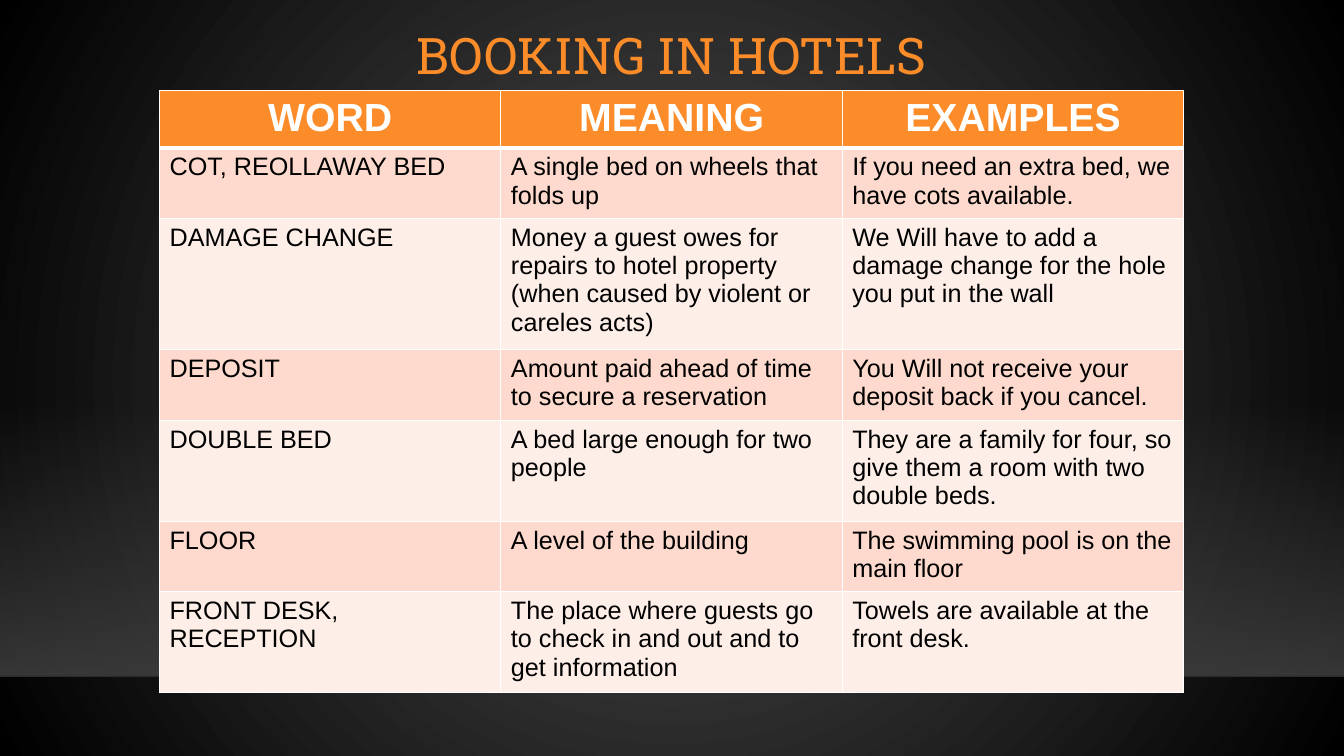
from lxml import etree
from pptx import Presentation
from pptx.dml.color import RGBColor
from pptx.enum.shapes import MSO_CONNECTOR, MSO_SHAPE
from pptx.enum.text import MSO_ANCHOR, PP_ALIGN
from pptx.oxml import parse_xml
from pptx.oxml.ns import nsdecls, qn
from pptx.util import Cm, Pt

STRAIGHT = MSO_CONNECTOR.STRAIGHT
RECTANGLE = MSO_SHAPE.RECTANGLE
MIDDLE = MSO_ANCHOR.MIDDLE
LEFT, CENTER = PP_ALIGN.LEFT, PP_ALIGN.CENTER

COLORS = {
    "orange": "FB8C29",
    "white": "FFFFFF",
    "black": "000000",
    "dark_band": "FDDACD",
    "light_band": "FEEEE8",
    "glow": "505050",
    "floor": "454545",
    "edge": "000001",
}
ROWS = [
    ("WORD", "MEANING", "EXAMPLES"),
    ("COT, REOLLAWAY BED", "A single bed on wheels that folds up",
     "If you need an extra bed, we have cots available."),
    ("DAMAGE CHANGE",
     "Money a guest owes for repairs to hotel property (when caused by violent or careles acts)",
     "We Will have to add a damage change for the hole you put in the wall"),
    ("DEPOSIT", "Amount paid ahead of time to secure a reservation",
     "You Will not receive your deposit back if you cancel."),
    ("DOUBLE BED", "A bed large enough for two people",
     "They are a family for four, so give them a room with two double beds."),
    ("FLOOR", "A level of the building", "The swimming pool is on the main floor"),
    ("FRONT DESK, RECEPTION",
     "The place where guests go to check in and out and to get information",
     "Towels are available at the front desk."),
]
WIDTH, HEIGHT = Cm(33.87), Cm(19.05)
TABLE_LEFT, TABLE_WIDTH = Cm(4.02), Cm(25.81)
ROW_HEIGHT = Cm(1.04)
FLOOR_TOP, FLOOR_BOTTOM = Cm(10.06), Cm(17.04)


def write_text(frame, text, size, color, font="Arial", bold=False, align=LEFT, spacing=None):
    paragraph = frame.paragraphs[0]
    paragraph.alignment = align
    paragraph.line_spacing = spacing
    run = paragraph.add_run()
    run.text = text
    run.font.name = font
    run.font.size = Pt(size)
    run.font.bold = bold
    run.font.color.rgb = RGBColor.from_string(COLORS[color])


def set_gradient(element, start, end, direction, opacities=(100, 100)):
    stops = "".join(
        f'<a:gs pos="{position}"><a:srgbClr val="{COLORS[color]}">'
        f'<a:alpha val="{opacity * 1000}"/></a:srgbClr></a:gs>'
        for position, color, opacity in zip((0, 100000), (start, end), opacities)
    )
    gradient = parse_xml(
        f'<a:gradFill {nsdecls("a")} rotWithShape="1"><a:gsLst>{stops}</a:gsLst>{direction}</a:gradFill>'
    )
    solid = next(element.iter(qn("a:solidFill")))
    solid.getparent().replace(solid, gradient)


presentation = Presentation()
presentation.slide_width, presentation.slide_height = WIDTH, HEIGHT
slide = presentation.slides.add_slide(presentation.slide_layouts[6])

slide.background.fill.solid()
set_gradient(
    slide.element, "glow", "black",
    '<a:path path="circle"><a:fillToRect l="50000" t="50000" r="50000" b="50000"/></a:path>',
)

floor = slide.shapes.add_shape(RECTANGLE, 0, FLOOR_TOP, WIDTH, FLOOR_BOTTOM - FLOOR_TOP)
floor.shadow.inherit = False
floor.line.fill.background()
floor.fill.solid()
set_gradient(floor.element.spPr, "floor", "floor", '<a:lin ang="5400000" scaled="0"/>', (0, 80))

edge = slide.shapes.add_connector(STRAIGHT, 0, FLOOR_BOTTOM, WIDTH, FLOOR_BOTTOM)
edge.line.width = Pt(1)
edge.line.color.rgb = RGBColor.from_string(COLORS["edge"])
edge_color = next(edge.element.spPr.iter(qn("a:srgbClr")))
etree.SubElement(edge_color, qn("a:alpha")).set("val", "20000")
etree.SubElement(edge.element.spPr, qn("a:effectLst"))

title = slide.shapes.add_textbox(TABLE_LEFT, 0, TABLE_WIDTH, Cm(2.92))
title.text_frame.word_wrap = True
title.text_frame.vertical_anchor = MIDDLE
write_text(title.text_frame, "BOOKING IN HOTELS", 36, "orange",
           font="Roboto Slab", align=CENTER, spacing=0.9)

table = slide.shapes.add_table(
    len(ROWS), len(ROWS[0]), TABLE_LEFT, Cm(2.29), TABLE_WIDTH, ROW_HEIGHT * len(ROWS)
).table
for row_index, row in enumerate(ROWS):
    header = row_index == 0
    band = "orange" if header else "dark_band" if row_index % 2 else "light_band"
    for column_index, text in enumerate(row):
        cell = table.cell(row_index, column_index)
        cell.fill.solid()
        cell.fill.fore_color.rgb = RGBColor.from_string(COLORS[band])
        if header:
            write_text(cell.text_frame, text, 28, "white", bold=True, align=CENTER)
        else:
            write_text(cell.text_frame, text, 18, "black")
        properties = cell._tc.get_or_add_tcPr()
        for position, side in enumerate("LRTB"):
            thick = (row_index, side) in ((0, "B"), (1, "T"))
            properties.insert(position, parse_xml(
                f'<a:ln{side} {nsdecls("a")} w="{Pt(3 if thick else 1)}"><a:solidFill>'
                f'<a:srgbClr val="{COLORS["white"]}"/></a:solidFill></a:ln{side}>'
            ))

presentation.save("out.pptx")
